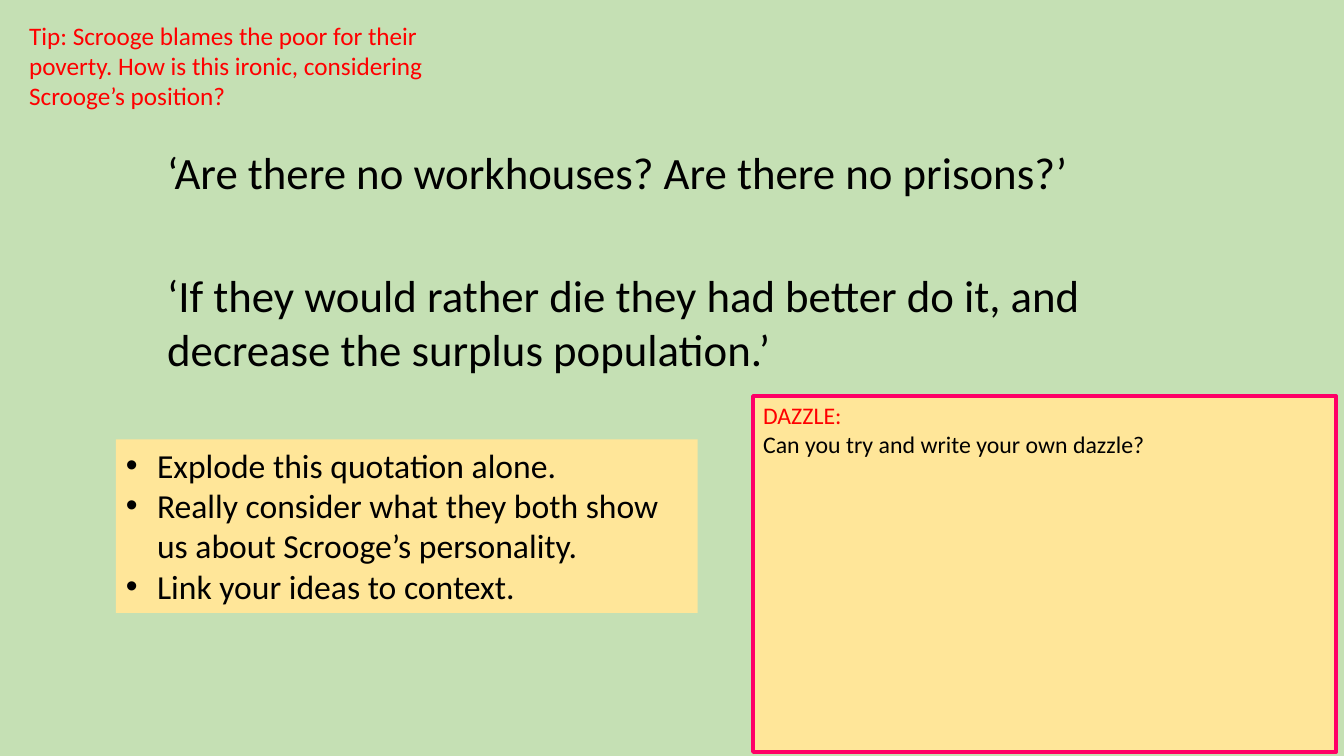
from dataclasses import dataclass

from lxml import etree
from pptx import Presentation
from pptx import util as u
from pptx.dml.color import RGBColor
from pptx.enum import shapes, text
from pptx.oxml.ns import qn

PX = 9144  # EMU per px, 100 px to the inch


@dataclass(frozen=True)
class Theme:
    font: str = "Calibri"
    back: str = "C5E0B4"
    panel: str = "FFE699"
    edge: str = "FF0066"
    ink: str = "000000"
    red: str = "FF0000"
    quote: int = 32
    task: int = 24
    tip: int = 18
    note: int = 17
    border: int = 3
    indent: int = 31


T = Theme()


@dataclass(frozen=True)
class Line:
    words: str
    color: str = T.ink


@dataclass(frozen=True)
class Box:
    left: int
    top: int
    width: int
    height: int
    size: int
    lines: tuple[Line, ...]
    fill: str | None = None
    edge: str | None = None
    bullet: bool = False


BOXES = (
    Box(156, 139, 1017, 64, T.quote,
        (Line("‘Are there no workhouses? Are there no prisons?’"),)),
    Box(19, 15, 449, 101, T.tip,
        (Line("Tip: Scrooge blames the poor for their poverty. "
              "How is this ironic, considering Scrooge’s position?", T.red),)),
    Box(747, 393, 578, 353, T.note,
        (Line("DAZZLE:", T.red), Line("Can you try and write your own dazzle?")),
        fill=T.panel, edge=T.edge),
    Box(156, 261, 1017, 118, T.quote,
        (Line("‘If they would rather die they had better do it, "
              "and decrease the surplus population.’"),)),
    Box(115, 436, 577, 172, T.task,
        (Line("Explode this quotation alone."),
         Line("Really consider what they both show us about Scrooge’s personality."),
         Line("Link your ideas to context.")),
        fill=T.panel, bullet=True),
)


def rgb(color: str) -> RGBColor:
    return RGBColor.from_string(color)


def add_bullet(para) -> None:
    """Give the paragraph a round bullet with a hanging indent."""
    props = para._p.get_or_add_pPr()
    props.set("marL", str(T.indent * PX))
    props.set("indent", str(-T.indent * PX))
    etree.SubElement(props, qn("a:buFont")).set("typeface", "Arial")
    etree.SubElement(props, qn("a:buChar")).set("char", "•")


def add_lines(frame, box: Box) -> None:
    frame.word_wrap = True
    frame.auto_size = text.MSO_AUTO_SIZE.NONE
    frame.vertical_anchor = text.MSO_ANCHOR.TOP
    for i, line in enumerate(box.lines):
        para = frame.add_paragraph() if i else frame.paragraphs[0]
        para.alignment = text.PP_ALIGN.LEFT
        if box.bullet:
            add_bullet(para)
        run = para.add_run()
        run.text = line.words
        run.font.name = T.font
        run.font.size = u.Pt(box.size)
        run.font.color.rgb = rgb(line.color)


def add_box(slide, box: Box) -> None:
    place = [n * PX for n in (box.left, box.top, box.width, box.height)]
    if box.fill:
        shape = slide.shapes.add_shape(shapes.MSO_SHAPE.RECTANGLE, *place)
        shape.shadow.inherit = False
        shape.fill.solid()
        shape.fill.fore_color.rgb = rgb(box.fill)
        if box.edge:
            shape.line.color.rgb = rgb(box.edge)
            shape.line.width = u.Pt(T.border)
        else:
            shape.line.fill.background()
    else:
        shape = slide.shapes.add_textbox(*place)
    add_lines(shape.text_frame, box)


def main() -> None:
    deck = Presentation()
    deck.slide_width = 1333 * PX
    deck.slide_height = 750 * PX
    slide = deck.slides.add_slide(deck.slide_layouts[6])
    slide.background.fill.solid()
    slide.background.fill.fore_color.rgb = rgb(T.back)
    for box in BOXES:
        add_box(slide, box)
    deck.save("out.pptx")


if __name__ == "__main__":
    main()
